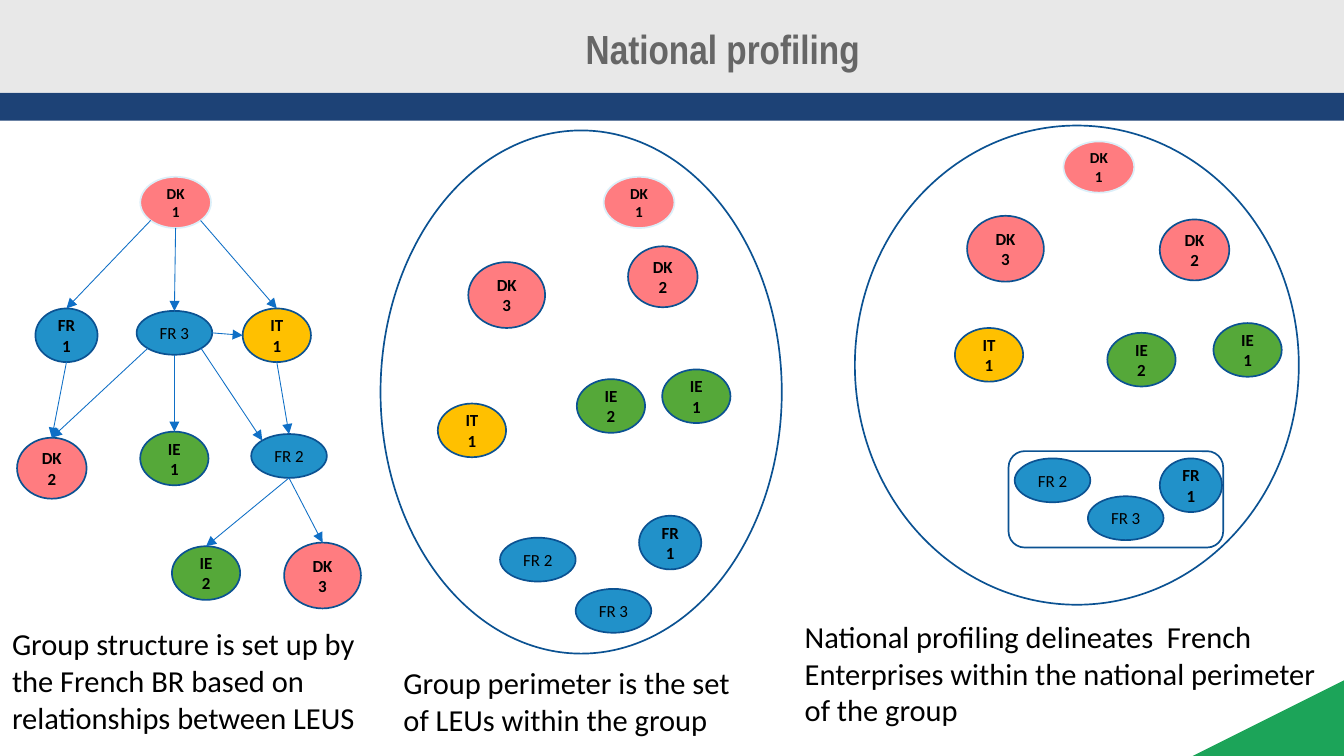
"""Build the slide on national profiling of an enterprise group."""
from math import cos, pi, sin

from lxml.etree import SubElement
from pptx import Presentation
from pptx.dml.color import RGBColor
from pptx.enum.shapes import MSO_CONNECTOR, MSO_SHAPE
from pptx.enum.text import MSO_ANCHOR, PP_ALIGN
from pptx.oxml.ns import qn
from pptx.util import Inches, Pt

OVAL, ROUND, RECT = MSO_SHAPE.OVAL, MSO_SHAPE.ROUNDED_RECTANGLE, MSO_SHAPE.RECTANGLE
LINE = MSO_CONNECTOR.STRAIGHT
MID, TOP = MSO_ANCHOR.MIDDLE, MSO_ANCHOR.TOP
LEFT, CENTER = PP_ALIGN.LEFT, PP_ALIGN.CENTER

BLACK = RGBColor(0x00, 0x00, 0x00)
GREY = RGBColor(0x66, 0x66, 0x66)
PALE = RGBColor(0xE8, 0xE8, 0xE8)
NAVY = RGBColor(0x1D, 0x42, 0x76)
LEAF = RGBColor(0x1C, 0xA4, 0x59)
EDGE = RGBColor(0x0B, 0x52, 0x92)
ICE = RGBColor(0xDB, 0xEF, 0xF9)
ARROW = RGBColor(0x0F, 0x6F, 0xC6)
PINK = RGBColor(0xFF, 0x7C, 0x80)
GOLD = RGBColor(0xFF, 0xC0, 0x00)
BLUE = RGBColor(0x21, 0x91, 0xC9)
GREEN = RGBColor(0x55, 0xA8, 0x39)

COLS, ROWS = 1102, 620
UNIT = Inches(0.01)

deck = Presentation()
deck.slide_width, deck.slide_height = COLS * UNIT, ROWS * UNIT
slide = deck.slides.add_slide(deck.slide_layouts[5])
shapes = slide.shapes


def draw(kind, area, fill, edge):
    """Add a shape on the grid, with a fill and an edge that may be None."""
    shape = shapes.add_shape(kind, *[round(n * UNIT) for n in area])
    shape.shadow.inherit = False
    if fill is None:
        shape.fill.background()
    else:
        shape.fill.solid()
        shape.fill.fore_color.rgb = fill
    if edge is None:
        shape.line.fill.background()
    else:
        shape.line.color.rgb = edge
        shape.line.width = Pt(1)
    return shape


def write(shape, text, frame, align, font, color):
    """Put one formatted paragraph in a shape."""
    body = shape.text_frame
    body.text = text
    for name, value in frame.items():
        setattr(body, name, value)
    para = body.paragraphs[0]
    para.alignment = align
    for name, value in font.items():
        setattr(para.runs[0].font, name, value)
    para.runs[0].font.color.rgb = color


draw(RECT, (0, 76, COLS, 23), NAVY, None)
draw(RECT, (0, 0, COLS, 76), PALE, None)
pen = shapes.build_freeform(COLS, 558, scale=UNIT)
pen.add_line_segments([(978, ROWS), (COLS, ROWS)])
corner = pen.convert_to_shape()
corner.shadow.inherit = False
corner.fill.solid()
corner.fill.fore_color.rgb = LEAF
corner.line.fill.background()

title = shapes.title
title.left, title.top = 81 * UNIT, 0
title.width, title.height = 1031 * UNIT - 10 * UNIT, 79 * UNIT
title.width = 1031 * UNIT
flush = dict(vertical_anchor=MID, word_wrap=True, margin_left=0,
             margin_right=0, margin_top=0, margin_bottom=0)
write(title, "National profiling ", flush, CENTER,
      dict(name="Arial Narrow", size=Pt(24), bold=True), GREY)
shapes._spTree.append(title.element)

for kind, area in [(OVAL, (701, 103, 364, 393)), (ROUND, (827, 370, 176, 79)),
                   (OVAL, (312, 107, 329, 429))]:
    draw(kind, area, None, EDGE)

UNITS = {
    "DK 1": (58, 42, PINK, ICE, 9, True),
    "DK 2": (57, 50, PINK, EDGE, 10, True),
    "DK 3": (63, 54, PINK, EDGE, 10, True),
    "FR 1": (51, 44, BLUE, EDGE, 10, True),
    "FR 2": (62, 36, BLUE, EDGE, 10, False),
    "FR 3": (62, 36, BLUE, EDGE, 10, False),
    "IT 1": (56, 44, GOLD, EDGE, 10, True),
    "IE 1": (56, 44, GREEN, EDGE, 10, True),
    "IE 2": (56, 44, GREEN, EDGE, 10, True),
}
TREE = {"DK 1": (115, 145), "DK 2": (14, 359), "DK 3": (233, 445),
        "FR 1": (29, 253), "FR 2": (206, 356), "FR 3": (112, 255),
        "IT 1": (199, 253), "IE 1": (115, 354), "IE 2": (141, 448)}
GROUP = {"DK 1": (495, 145), "DK 2": (515, 202), "DK 3": (384, 215),
         "FR 1": (524, 423), "FR 2": (410, 441), "FR 3": (472, 483),
         "IT 1": (359, 331), "IE 1": (543, 303), "IE 2": (473, 311)}
NATION = {"DK 1": (872, 116), "DK 2": (951, 180), "DK 3": (793, 177),
          "FR 1": (951, 376), "FR 2": (832, 376), "FR 3": (892, 407),
          "IT 1": (783, 269), "IE 1": (995, 265), "IE 2": (908, 273)}

nodes = {}
for panel in (NATION, GROUP, TREE):
    for name, (x, y) in panel.items():
        w, h, fill, edge, size, bold = UNITS[name]
        nodes[name] = draw(OVAL, (x, y, w, h), fill, edge)
        write(nodes[name], name, dict(vertical_anchor=MID, word_wrap=bold),
              CENTER, dict(name="Calibri", size=Pt(size), bold=bold), BLACK)

LINKS = [("DK 1", 3, "FR 1", 0), ("DK 1", 4, "FR 3", 0), ("DK 1", 5, "IT 1", 0),
         ("FR 3", 3, "DK 2", 0), ("FR 3", 4, "IE 1", 0), ("FR 3", 5, "FR 2", 1),
         ("FR 3", 6, "IT 1", 2), ("FR 1", 4, "DK 2", 0), ("IT 1", 4, "FR 2", 0),
         ("FR 2", 4, "DK 3", 0), ("FR 2", 4, "IE 2", 0)]
for start, out, end, into in LINKS:
    ends = []
    for name, site in ((start, out), (end, into)):
        node, turn = nodes[name], site * pi / 4
        ends += [round(node.left + node.width * (1 - sin(turn)) / 2),
                 round(node.top + node.height * (1 - cos(turn)) / 2)]
    link = shapes.add_connector(LINE, *ends)
    link.line.color.rgb = ARROW
    link.line.width = Pt(0.5)
    SubElement(link.line._get_or_add_ln(), qn("a:tailEnd"), type="triangle")
    SubElement(link.element.spPr, qn("a:effectLst"))
    glue = link.element.nvCxnSpPr.cNvCxnSpPr
    for tag, name, site in (("a:stCxn", start, out), ("a:endCxn", end, into)):
        SubElement(glue, qn(tag), id=str(nodes[name].shape_id), idx=str(site))

CAPTIONS = [
    ((0, 508, 321, 101), "Group structure is set up by the French BR based on "
                         "relationships between LEUS"),
    ((321, 540, 301, 71), "Group perimeter is the set of LEUs within the group"),
    ((650, 502, 452, 101), "National profiling delineates  French Enterprises "
                           "within the national perimeter of the group"),
]
for area, text in CAPTIONS:
    box = shapes.add_textbox(*[n * UNIT for n in area])
    write(box, text, dict(vertical_anchor=TOP, word_wrap=True), LEFT,
          dict(name="Calibri", size=Pt(18)), BLACK)

deck.save("out.pptx")
